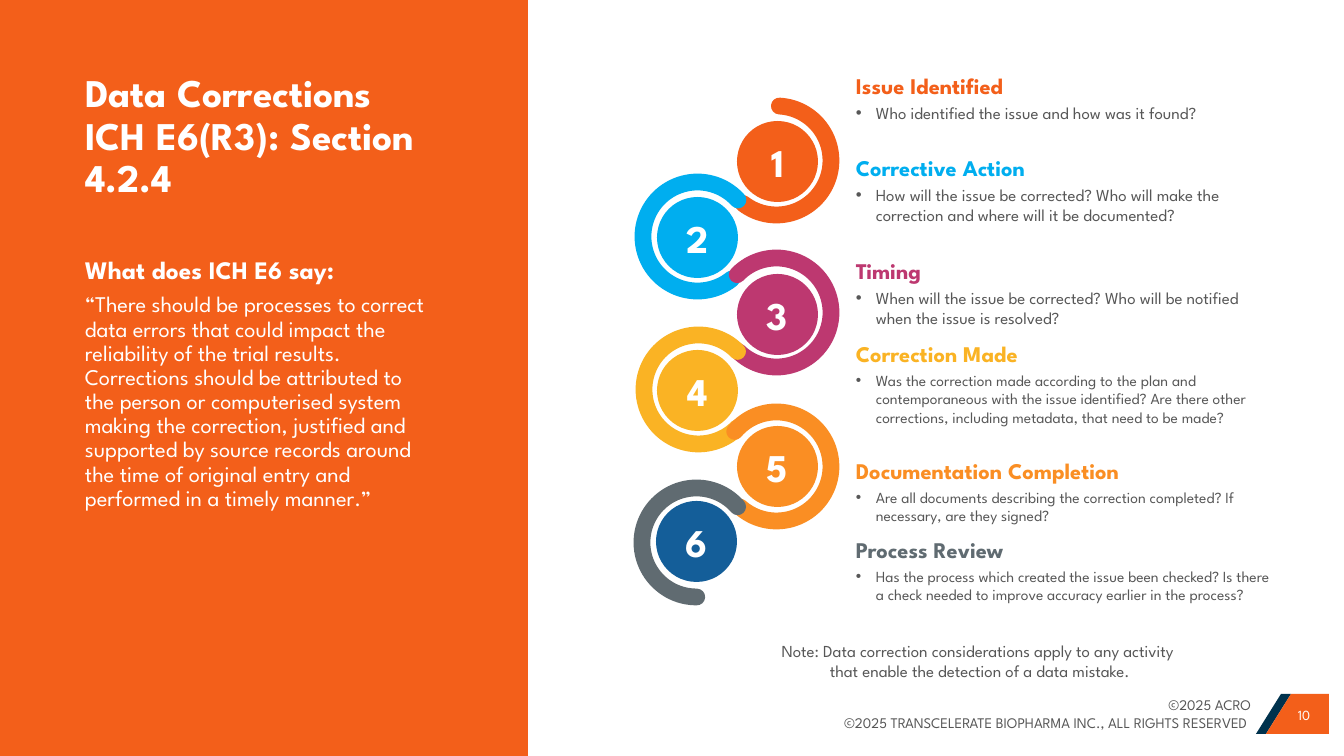
from dataclasses import dataclass
from typing import Optional

import pptx
import pptx.dml.color
import pptx.enum.shapes
import pptx.enum.text
import pptx.oxml
import pptx.oxml.ns
import pptx.util

EMU_PER_PX = 914400 / 100.8
ALIGN = pptx.enum.text.PP_ALIGN
ANCHOR = pptx.enum.text.MSO_ANCHOR
SHAPE = pptx.enum.shapes.MSO_SHAPE


@dataclass(frozen=True)
class Theme:
    font: str = "League Spartan"
    white: str = "FFFFFF"
    text: str = "575757"
    orange: str = "F35F1A"
    navy: str = "00324D"
    cyan: str = "00AEEF"
    magenta: str = "BD3870"
    yellow: str = "FAB324"
    amber: str = "FA8E23"
    grey: str = "606B71"
    blue: str = "145E99"
    display: float = 28
    subtitle: float = 18
    body: float = 16
    detail: float = 12
    small: float = 11
    footer: float = 10.5
    page: float = 10


THEME = Theme()
RING_SIZE, DISC_SIZE, RING_WEIGHT = 109, 81, 12
STEP_TEXT_LEFT, BULLET_INDENT = 846, 20


@dataclass(frozen=True)
class Box:
    left: int
    top: int
    width: int
    height: int

    def emu(self) -> tuple:
        return tuple(px(v) for v in (self.left, self.top, self.width, self.height))


@dataclass(frozen=True)
class Line:
    text: str
    size: float
    color: str
    bold: bool = False
    align: ALIGN = ALIGN.LEFT
    spacing: Optional[float] = None
    after: float = 0
    bullet: bool = False


@dataclass(frozen=True)
class Step:
    heading: str
    detail: str
    detail_size: float
    color: str
    disc_color: str
    ring: tuple[int, int]
    rotation: float
    angles: tuple[float, float]  # degrees, clockwise from the right
    disc: tuple[int, int]
    text_top: int
    text_width: int
    text_height: int


STEPS = [
    Step("Issue Identified", "Who identified the issue and how was it found?",
         THEME.detail, THEME.orange, THEME.orange,
         (722, 106), 0, (273.06, 128.02), (737, 121), 67, 386, 83),
    Step("Corrective Action",
         "How will the issue be corrected? Who will make the correction and where will it be documented?",
         THEME.detail, THEME.cyan, THEME.cyan,
         (643, 182), 270, (141.12, 47.91), (657, 197), 149, 412, 103),
    Step("Timing",
         "When will the issue be corrected? Who will be notified when the issue is resolved?",
         THEME.detail, THEME.magenta, THEME.magenta,
         (722, 258), 270, (313.93, 224.16), (737, 274), 252, 427, 83),
    Step("Correction Made",
         "Was the correction made according to the plan and contemporaneous with the issue identified? "
         "Are there other corrections, including metadata, that need to be made?",
         THEME.small, THEME.yellow, THEME.yellow,
         (644, 335), 100.4, (304.12, 215.38), (657, 350), 335, 427, 116),
    Step("Documentation Completion",
         "Are all documents describing the correction completed? If necessary, are they signed?",
         THEME.small, THEME.amber, THEME.amber,
         (722, 412), 100.4, (119.57, 31.4), (737, 426), 452, 427, 79),
    Step("Process Review",
         "Has the process which created the issue been checked? "
         "Is there a check needed to improve accuracy earlier in the process?",
         THEME.small, THEME.grey, THEME.blue,
         (642, 488), 100.4, (349.3, 218.64), (656, 501), 531, 435, 101),
]


def px(value: float) -> int:
    return round(value * EMU_PER_PX)


def rgb(color: str) -> pptx.dml.color.RGBColor:
    return pptx.dml.color.RGBColor.from_string(color)


def paint(shape, color: str) -> None:
    shape.shadow.inherit = False
    shape.fill.solid()
    shape.fill.fore_color.rgb = rgb(color)
    shape.line.fill.background()


def add_bullet(paragraph) -> None:
    properties = paragraph._p.get_or_add_pPr()
    properties.set("marL", str(px(BULLET_INDENT)))
    properties.set("indent", str(-px(BULLET_INDENT)))
    namespace = pptx.oxml.ns.nsdecls("a")
    for xml in (f'<a:buFont {namespace} typeface="Arial"/>', f'<a:buChar {namespace} char="•"/>'):
        properties.append(pptx.oxml.parse_xml(xml))


def write(frame, lines: list[Line], anchor=ANCHOR.TOP, inset: bool = False, wrap: bool = True) -> None:
    frame.auto_size = pptx.enum.text.MSO_AUTO_SIZE.NONE
    frame.word_wrap = wrap
    frame.vertical_anchor = anchor
    if not inset:
        frame.margin_left = frame.margin_top = frame.margin_right = frame.margin_bottom = 0
    for index, line in enumerate(lines):
        paragraph = frame.add_paragraph() if index else frame.paragraphs[0]
        for part_index, part in enumerate(line.text.splitlines()):
            if part_index:
                paragraph.add_line_break()
            paragraph.add_run().text = part
        if line.bullet:
            add_bullet(paragraph)
        paragraph.alignment = line.align
        paragraph.line_spacing = line.spacing
        paragraph.space_after = pptx.util.Pt(line.after)
        font = paragraph.font
        font.name, font.size, font.bold = THEME.font, pptx.util.Pt(line.size), line.bold
        font.color.rgb = rgb(line.color)


def add_text(slide, box: Box, lines: list[Line], anchor=ANCHOR.TOP, inset: bool = False) -> None:
    write(slide.shapes.add_textbox(*box.emu()).text_frame, lines, anchor, inset)


def add_polygon(slide, points: list[tuple[int, int]], color: str) -> None:
    builder = slide.shapes.build_freeform(*points[0], scale=EMU_PER_PX)
    builder.add_line_segments(points[1:], close=True)
    paint(builder.convert_to_shape(), color)


def add_ring(slide, step: Step) -> None:
    ring = slide.shapes.add_shape(SHAPE.ARC, *Box(*step.ring, RING_SIZE, RING_SIZE).emu())
    ring.shadow.inherit = False
    ring.fill.background()
    ring.rotation = step.rotation
    for index, angle in enumerate(step.angles):
        ring.adjustments[index] = angle * 0.6  # 60000ths of a degree over 100000
    ring.line.color.rgb = rgb(step.color)
    ring.line.width = pptx.util.Pt(RING_WEIGHT)
    ring.line._get_or_add_ln().set("cap", "rnd")


def add_step(slide, number: int, step: Step) -> None:
    disc = slide.shapes.add_shape(SHAPE.OVAL, *Box(*step.disc, DISC_SIZE, DISC_SIZE).emu())
    paint(disc, step.disc_color)
    write(disc.text_frame, [Line(str(number), THEME.display, THEME.white, True, ALIGN.CENTER)],
          ANCHOR.MIDDLE, wrap=False)
    add_text(slide, Box(STEP_TEXT_LEFT, step.text_top, step.text_width, step.text_height), [
        Line(step.heading, THEME.body, step.color, True, after=3),
        Line(step.detail, step.detail_size, THEME.text, after=3, bullet=True),
    ], inset=True)


def main() -> None:
    presentation = pptx.Presentation()
    presentation.slide_width, presentation.slide_height = px(1344), px(756)
    slide = presentation.slides.add_slide(presentation.slide_layouts.get_by_name("Title Only"))

    # Left panel, placed behind the title
    panel = slide.shapes.add_shape(SHAPE.RECTANGLE, *Box(0, 0, 528, 756).emu())
    paint(panel, THEME.orange)
    title = slide.shapes.title
    title._element.addprevious(panel._element)
    title.left, title.top, title.width, title.height = Box(85, 39, 349, 162).emu()
    write(title.text_frame, [Line("""Data Corrections
ICH E6(R3): Section 4.2.4""", THEME.display, THEME.white, True, spacing=0.9)], ANCHOR.BOTTOM)
    add_text(slide, Box(85, 258, 349, 397), [
        Line("What does ICH E6 say:", THEME.subtitle, THEME.white, True, spacing=0.9, after=6),
        Line("“There should be processes to correct data errors that could impact the reliability of "
             "the trial results. Corrections should be attributed to the person or computerised system "
             "making the correction, justified and supported by source records around the time of "
             "original entry and performed in a timely manner.”",
             THEME.body, THEME.white, spacing=0.9, after=6),
    ])

    # Chain of steps
    for step in STEPS:
        add_ring(slide, step)
    for number, step in enumerate(STEPS, 1):
        add_step(slide, number, step)

    # Note
    add_text(slide, Box(680, 641, 600, 40), [
        Line(text, THEME.detail, THEME.text, align=ALIGN.CENTER)
        for text in ("Note: Data correction considerations apply to any activity ",
                     "that enable the detection of a data mistake.")])

    # Footer and page number
    add_text(slide, Box(589, 691, 672, 45), [
        Line(text, THEME.footer, THEME.text, align=ALIGN.RIGHT)
        for text in ("©2025 ACRO", "©2025 TRANSCELERATE BIOPHARMA INC., ALL RIGHTS RESERVED ")],
        inset=True)
    add_polygon(slide, [(1281, 694), (1291, 694), (1266, 734), (1256, 734)], THEME.navy)
    add_polygon(slide, [(1291, 694), (1329, 694), (1329, 734), (1266, 734)], THEME.orange)
    add_text(slide, Box(1280, 699, 48, 31),
             [Line("10", THEME.page, THEME.white, align=ALIGN.CENTER)], ANCHOR.MIDDLE)

    presentation.save("out.pptx")


if __name__ == "__main__":
    main()
